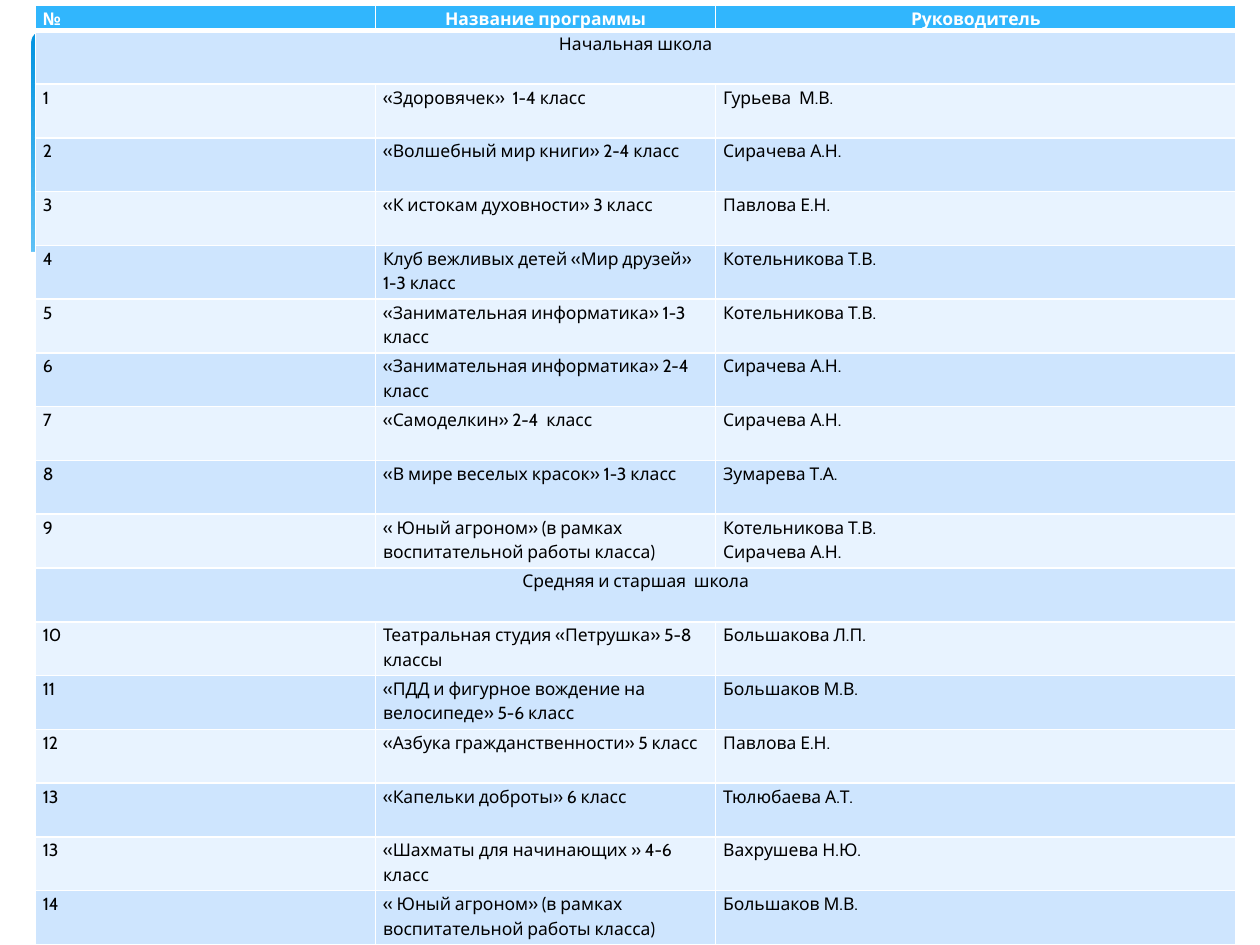
"""Build a slide that lists school clubs and their leaders."""
import dataclasses

import lxml.etree
import pptx
import pptx.dml.color
import pptx.enum.shapes
import pptx.enum.text
import pptx.oxml.ns
import pptx.shapes.autoshape
import pptx.slide
import pptx.table
import pptx.util

Inches = pptx.util.Inches
CENTER = pptx.enum.text.PP_ALIGN.CENTER
LEFT = pptx.enum.text.PP_ALIGN.LEFT
HEX = {
    "head": "31B6FD", "dark": "CEE5FE", "light": "E8F3FF", "white": "FFFFFF",
    "black": "000000", "top": "0293E0", "base": "83D3FE",
}
INSETS = {
    "margin_left": Inches(0.06), "margin_right": Inches(0.06),
    "margin_top": 0, "margin_bottom": 0,
}
FONT = {"name": "Cabin", "size": pptx.util.Pt(10)}
WIDTHS = (2.7, 2.7, 4.13)
HEAD_TALL = 0.2
ROW_TALL = (7.46 - HEAD_TALL) / 17
WAVE = [
    (0.23, 2.13), (0.46, 2.03), (0.85, 1.93), (1.32, 1.86), (1.93, 1.84),
    (2.71, 1.88), (3.65, 2.02), (4.47, 2.2), (5.55, 2.45), (6.48, 2.62),
    (7.26, 2.72), (8.09, 2.77), (8.75, 2.73), (9.3, 2.62), (9.77, 2.46),
    (9.77, 3.29), (0.23, 3.29),
]


@dataclasses.dataclass
class Club:
    num: str
    title: str
    leader: str


@dataclasses.dataclass
class Stage:
    name: str
    clubs: list[Club]


STAGES = [
    Stage("Начальная школа", [
        Club("1", "«Здоровячек»  1-4 класс", "Гурьева  М.В."),
        Club("2", "«Волшебный мир книги» 2-4 класс", "Сирачева А.Н."),
        Club("3", "«К истокам духовности» 3 класс", "Павлова Е.Н."),
        Club("4", "Клуб вежливых детей «Мир друзей» 1-3 класс", "Котельникова Т.В."),
        Club("5", "«Занимательная информатика» 1-3 класс", "Котельникова Т.В."),
        Club("6", "«Занимательная информатика» 2-4 класс", "Сирачева А.Н."),
        Club("7", "«Самоделкин» 2-4  класс", "Сирачева А.Н."),
        Club("8", "«В мире веселых красок» 1-3 класс", "Зумарева Т.А."),
        Club("9", "« Юный агроном» (в рамках воспитательной работы класса)",
             "Котельникова Т.В.\nСирачева А.Н."),
    ]),
    Stage("Средняя и старшая  школа", [
        Club("10", "Театральная студия «Петрушка» 5-8 классы", "Большакова Л.П."),
        Club("11", "«ПДД и фигурное вождение на велосипеде» 5-6 класс",
             "Большаков М.В."),
        Club("12", "«Азбука гражданственности» 5 класс", "Павлова Е.Н."),
        Club("13", "«Капельки доброты» 6 класс", "Тюлюбаева А.Т."),
        Club("13", "«Шахматы для начинающих » 4-6 класс", "Вахрушева Н.Ю."),
        Club("14", "« Юный агроном» (в рамках воспитательной работы класса)",
             "Большаков М.В."),
    ]),
]


def tint(name: str) -> pptx.dml.color.RGBColor:
    return pptx.dml.color.RGBColor.from_string(HEX[name])


def apply(target: object, values: dict) -> None:
    for key, value in values.items():
        setattr(target, key, value)


def edge(cell: pptx.table._Cell, base: int) -> None:
    props = cell._tc.get_or_add_tcPr()
    tag = pptx.oxml.ns.qn
    for spot, (side, points) in enumerate(
            {"lnL": 1, "lnR": 1, "lnT": 1, "lnB": base}.items()):
        line = lxml.etree.Element(tag(f"a:{side}"), w=str(pptx.util.Pt(points)))
        fill = lxml.etree.SubElement(line, tag("a:solidFill"))
        lxml.etree.SubElement(fill, tag("a:srgbClr"), val=HEX["white"])
        props.insert(spot, line)


def write(cell: pptx.table._Cell, text: str, fill: str,
          head: bool = False, align: pptx.enum.text.PP_ALIGN = LEFT) -> None:
    cell.text = text
    apply(cell, INSETS)
    cell.fill.solid()
    cell.fill.fore_color.rgb = tint(fill)
    edge(cell, 3 if head else 1)
    for para in cell.text_frame.paragraphs:
        apply(para, {"alignment": align, "line_spacing": 1.15})
        apply(para.font, FONT)
        for run in para.runs:
            apply(run.font, FONT | {"bold": head})
            run.font.color.rgb = tint("white" if head else "black")


def plain(shape: pptx.shapes.autoshape.Shape) -> None:
    shape.shadow.inherit = False
    shape.line.fill.background()


def draw_back(slide: pptx.slide.Slide) -> None:
    panel = slide.shapes.add_shape(
        pptx.enum.shapes.MSO_SHAPE.ROUNDED_RECTANGLE,
        Inches(0.25), Inches(0.25), Inches(9.51), Inches(2.7))
    panel.adjustments[0] = 0.03
    plain(panel)
    panel.fill.gradient()
    panel.fill.gradient_angle = 270
    for stop, name, place in zip(
            panel.fill.gradient_stops, ("top", "base"), (0, 0.9)):
        stop.color.rgb = tint(name)
        stop.position = place
    pen = slide.shapes.build_freeform(*WAVE[0], scale=Inches(1))
    pen.add_line_segments(WAVE[1:])
    wave = pen.convert_to_shape()
    plain(wave)
    wave.fill.solid()
    wave.fill.fore_color.rgb = tint("white")


def draw_grid(slide: pptx.slide.Slide) -> None:
    rows = [("№", "Название программы", "Руководитель")]
    for stage in STAGES:
        rows.append((stage.name, "", ""))
        rows.extend(dataclasses.astuple(club) for club in stage.clubs)
    grid = slide.shapes.add_table(
        len(rows), len(WIDTHS), Inches(0.28), Inches(0.04),
        Inches(sum(WIDTHS)), Inches(7.46)).table
    for col, width in zip(grid.columns, WIDTHS):
        col.width = Inches(width)
    for at, texts in enumerate(rows):
        head = at == 0
        band = not head and not texts[1]
        grid.rows[at].height = Inches(HEAD_TALL if head else ROW_TALL)
        fill = "head" if head else "dark" if at % 2 else "light"
        for col, text in enumerate(texts):
            mid = band or head and col > 0
            write(grid.cell(at, col), text, fill, head, CENTER if mid else LEFT)
        if band:
            grid.cell(at, 0).merge(grid.cell(at, len(WIDTHS) - 1))


def main() -> None:
    deck = pptx.Presentation()
    apply(deck, {"slide_width": Inches(10), "slide_height": Inches(7.5)})
    slide = deck.slides.add_slide(deck.slide_layouts[6])
    draw_back(slide)
    draw_grid(slide)
    deck.save("out.pptx")


if __name__ == "__main__":
    main()
